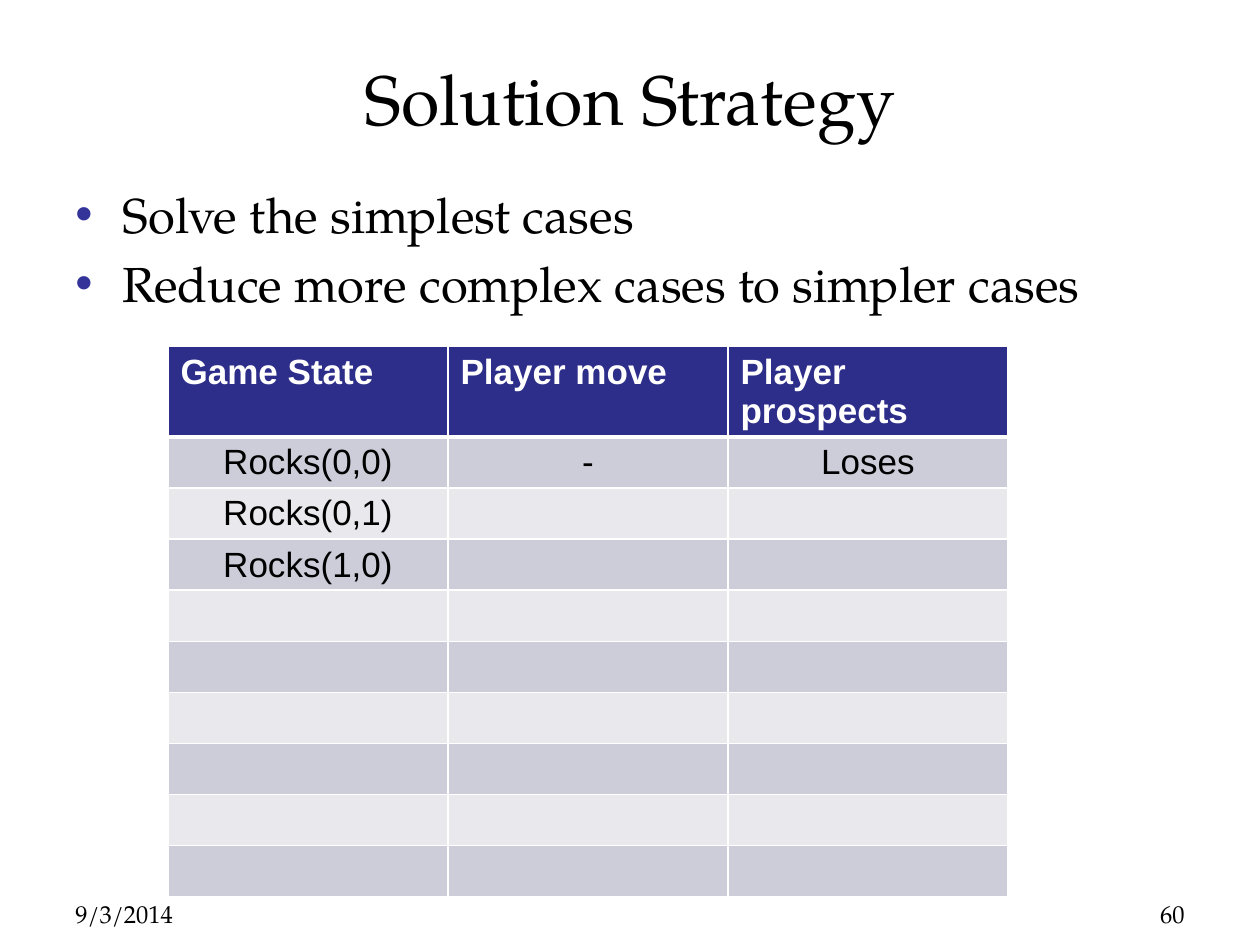
from dataclasses import dataclass

from lxml.etree import SubElement
from pptx import Presentation
from pptx.dml.color import RGBColor
from pptx.enum.text import MSO_ANCHOR as Anchor, PP_ALIGN as Align
from pptx.oxml.ns import qn
from pptx.util import Pt


@dataclass(frozen=True)
class Theme:
    serif: str = "TeX Gyre Pagella"
    sans: str = "Arial"
    title_size: int = 40
    body_size: int = 28
    table_size: int = 20
    footer_size: int = 14
    text: str = "000000"
    white: str = "FFFFFF"
    bullet: str = "333399"
    header: str = "2D2D8A"
    bands: tuple = ("CDCDDA", "E8E8ED")


THEME = Theme()
HEADINGS = ["Game State", "Player move", "Player prospects"]
STATES = [["Rocks(0,0)", "-", "Loses"], ["Rocks(0,1)"], ["Rocks(1,0)"]]
BODY_ROWS = 9


def place(shape, box):
    shape.left, shape.top, shape.width, shape.height = map(Pt, box)


def format_runs(paragraph, font_name, size, color=THEME.text, bold=False):
    for run in paragraph.runs:
        run.font.name = font_name
        run.font.size = Pt(size)
        run.font.bold = bold
        run.font.color.rgb = RGBColor.from_string(color)


def add_title(slide, box, text):
    title = slide.shapes.title
    place(title, box)
    frame = title.text_frame
    frame.text = text
    frame.vertical_anchor = Anchor.MIDDLE
    frame.paragraphs[0].alignment = Align.CENTER
    format_runs(frame.paragraphs[0], THEME.serif, THEME.title_size)


def add_text(slide, box, lines):
    frame = slide.shapes.add_textbox(*map(Pt, box)).text_frame
    frame.word_wrap = True
    frame.text = "\n".join(lines)
    return frame.paragraphs


def add_bullet(paragraph, indent):
    properties = paragraph._p.get_or_add_pPr()
    properties.set("marL", str(Pt(indent)))
    properties.set("indent", str(-Pt(indent)))
    color = SubElement(properties, qn("a:buClr"))
    SubElement(color, qn("a:srgbClr"), val=THEME.bullet)
    SubElement(properties, qn("a:buFont"), typeface=THEME.sans)
    SubElement(properties, qn("a:buChar"), char="•")


def add_bullet_list(slide, box, lines):
    for index, paragraph in enumerate(add_text(slide, box, lines)):
        add_bullet(paragraph, 27)
        if index:
            paragraph.space_before = Pt(THEME.body_size * 0.2)
        format_runs(paragraph, THEME.serif, THEME.body_size)


def add_footer(slide, box, date, number):
    left, top, width, height = box
    field_width = 168
    fields = [(left, date, Align.LEFT),
              (left + width - field_width, number, Align.RIGHT)]
    for field_left, text, alignment in fields:
        paragraph = add_text(slide, (field_left, top, field_width, height), [text])[0]
        paragraph.alignment = alignment
        format_runs(paragraph, THEME.serif, THEME.footer_size)


def set_borders(cell, bottom, top):
    properties = cell._tc.get_or_add_tcPr()
    widths = {"a:lnL": 1, "a:lnR": 1, "a:lnT": top, "a:lnB": bottom}
    for position, (side, width) in enumerate(widths.items()):
        line = SubElement(properties, qn(side), w=str(Pt(width)))
        fill = SubElement(line, qn("a:solidFill"))
        SubElement(fill, qn("a:srgbClr"), val=THEME.white)
        properties.insert(position, line)


def add_state_table(slide, box):
    rows, columns = BODY_ROWS + 1, len(HEADINGS)
    table = slide.shapes.add_table(rows, columns, *map(Pt, box)).table
    for row in table.rows:
        row.height = Pt(box[3] / rows)
    contents = [HEADINGS] + STATES
    for row_index in range(rows):
        is_header = row_index == 0
        fill = THEME.header if is_header else THEME.bands[(row_index - 1) % 2]
        color = THEME.white if is_header else THEME.text
        texts = contents[row_index] if row_index < len(contents) else []
        for column_index in range(columns):
            cell = table.cell(row_index, column_index)
            cell.margin_bottom = Pt(0)
            cell.fill.solid()
            cell.fill.fore_color.rgb = RGBColor.from_string(fill)
            set_borders(cell, 3 if is_header else 1, 3 if row_index == 1 else 1)
            if column_index < len(texts):
                cell.text_frame.text = texts[column_index]
                paragraph = cell.text_frame.paragraphs[0]
                paragraph.alignment = Align.LEFT if is_header else Align.CENTER
                format_runs(paragraph, THEME.sans, THEME.table_size, color, is_header)


def main():
    presentation = Presentation()
    presentation.slide_width, presentation.slide_height = Pt(720), Pt(540)
    slide = presentation.slides.add_slide(presentation.slide_layouts[5])
    add_title(slide, (36, 21.6, 648, 68.4), "Solution Strategy")
    add_bullet_list(slide, (36, 102, 648, 402), [
        "Solve the simplest cases",
        "Reduce more complex cases to simpler cases",
    ])
    add_footer(slide, (36, 510, 648, 19.5), "9/3/2014", "60")
    add_state_table(slide, (96, 198, 480, 292))
    presentation.save("out.pptx")


if __name__ == "__main__":
    main()
